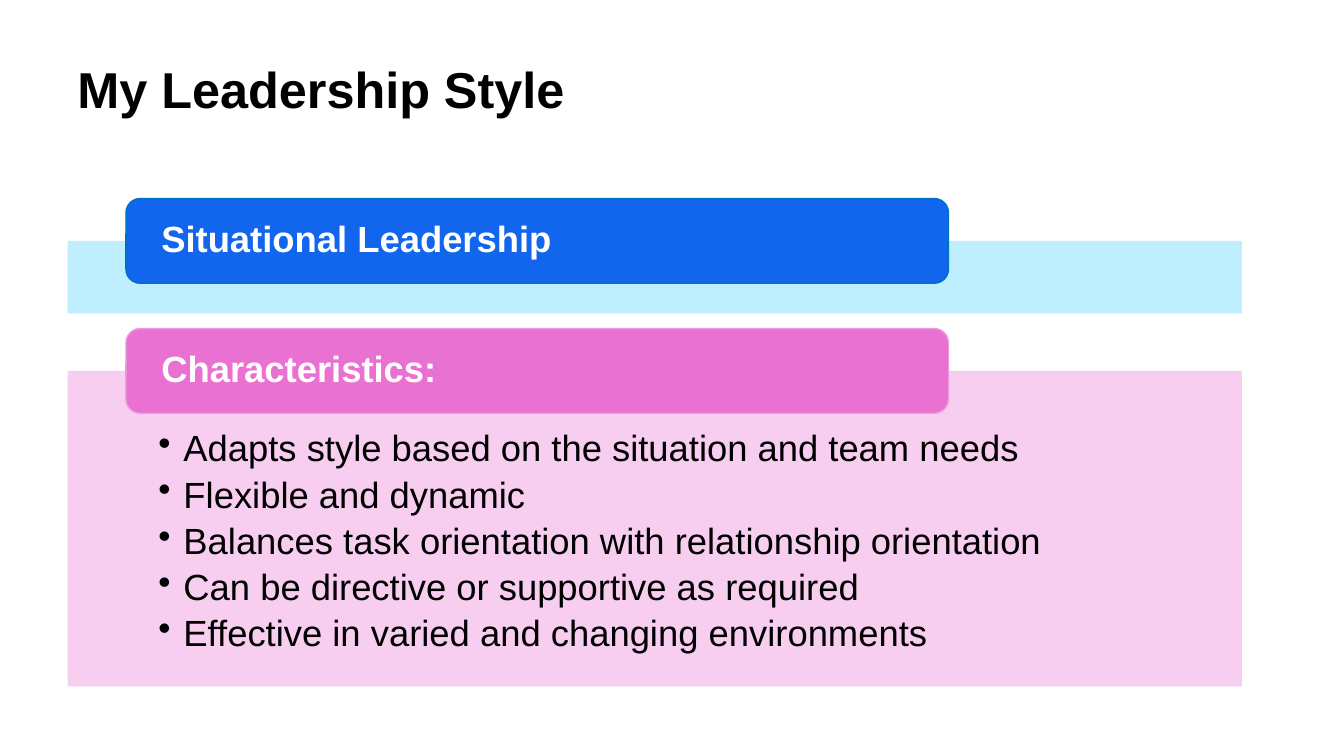
from dataclasses import dataclass

from lxml.etree import SubElement
from pptx import Presentation
from pptx.dml.color import RGBColor
from pptx.enum.shapes import MSO_SHAPE
from pptx.enum.text import MSO_ANCHOR, PP_ALIGN
from pptx.oxml.ns import qn
from pptx.util import Pt

TITLE = "My Leadership Style"
PANELS = [
    {"heading": "Situational Leadership", "points": [], "height": 51.84,
     "band": "B9EDFF", "tab": "1266EE", "border": "0070C0"},
    {"heading": "Characteristics:", "height": 225.36,
     "band": "F7C9EE", "tab": "E971D2", "border": "EF99DF",
     "points": ["Adapts style based on the situation and team needs",
                "Flexible and dynamic",
                "Balances task orientation with relationship orientation",
                "Can be directive or supportive as required",
                "Effective in varied and changing environments"]},
]


@dataclass(frozen=True)
class Theme:
    font: str = "Arial"
    ink: str = "000000"
    tab_ink: str = "FFFFFF"
    title_size: int = 36
    body_size: int = 26
    line_spacing: float = 0.9
    point_gap: float = 5
    bullet_indent: int = 18
    band_opacity: int = 90


THEME = Theme()
SLIDE_WIDTH, SLIDE_HEIGHT = 960, 540
LEFT, WIDTH = 48.24, 838.8
TITLE_TOP, TITLE_HEIGHT = 43.2, 89.28
FIRST_BAND_TOP, BAND_GAP = 172.08, 41.04
TAB_LEFT, TAB_WIDTH, TAB_HEIGHT = 90, 587.52, 60.48


def write(shape, lines, size, color, bold=False, anchor=MSO_ANCHOR.TOP,
          insets=(7.2, 3.6, 7.2, 3.6)):
    """Fill a shape with left-aligned paragraphs; insets run left, top, right, bottom."""
    frame = shape.text_frame
    frame.word_wrap = True
    frame.vertical_anchor = anchor
    (frame.margin_left, frame.margin_top,
     frame.margin_right, frame.margin_bottom) = map(Pt, insets)
    frame.text = "\n".join(lines)
    for paragraph in frame.paragraphs:
        paragraph.alignment = PP_ALIGN.LEFT
        paragraph.line_spacing = THEME.line_spacing
        font = paragraph.runs[0].font
        font.name, font.size, font.bold = THEME.font, Pt(size), bold
        font.color.rgb = RGBColor.from_string(color)


def add_block(slide, preset, left, top, width, height, fill):
    block = slide.shapes.add_shape(preset, Pt(left), Pt(top), Pt(width), Pt(height))
    block.shadow.inherit = False
    block.fill.solid()
    block.fill.fore_color.rgb = RGBColor.from_string(fill)
    block.line.fill.background()
    return block


def set_opacity(block, percent):
    color = block.fill._xPr.find(qn("a:solidFill"))[0]
    SubElement(color, qn("a:alpha")).set("val", str(percent * 1000))


def add_bullets(band):
    for paragraph in band.text_frame.paragraphs:
        paragraph.space_after = Pt(THEME.point_gap)
        properties = paragraph._p.get_or_add_pPr()
        properties.set("marL", str(Pt(THEME.bullet_indent)))
        properties.set("indent", str(-Pt(THEME.bullet_indent)))
        SubElement(properties, qn("a:buChar")).set("char", "•")


def add_panel(slide, panel, top):
    band = add_block(slide, MSO_SHAPE.RECTANGLE, LEFT, top, WIDTH,
                     panel["height"], panel["band"])
    set_opacity(band, THEME.band_opacity)
    if panel["points"]:
        write(band, panel["points"], THEME.body_size, THEME.ink,
              insets=(64.8, 42.48, 64.8, 14.4))
        add_bullets(band)

    tab = add_block(slide, MSO_SHAPE.ROUNDED_RECTANGLE, TAB_LEFT,
                    top - TAB_HEIGHT / 2, TAB_WIDTH, TAB_HEIGHT, panel["tab"])
    tab.line.color.rgb = RGBColor.from_string(panel["border"])
    tab.line.width = Pt(1)
    write(tab, [panel["heading"]], THEME.body_size, THEME.tab_ink, bold=True,
          anchor=MSO_ANCHOR.MIDDLE, insets=(22.32, 0, 22.32, 0))


def main():
    deck = Presentation()
    deck.slide_width, deck.slide_height = Pt(SLIDE_WIDTH), Pt(SLIDE_HEIGHT)
    slide = deck.slides.add_slide(deck.slide_layouts[6])

    title = slide.shapes.add_textbox(Pt(LEFT), Pt(TITLE_TOP), Pt(WIDTH), Pt(TITLE_HEIGHT))
    write(title, [TITLE], THEME.title_size, THEME.ink, bold=True)

    top = FIRST_BAND_TOP
    for panel in PANELS:
        add_panel(slide, panel, top)
        top += panel["height"] + BAND_GAP

    deck.save("out.pptx")


if __name__ == "__main__":
    main()
